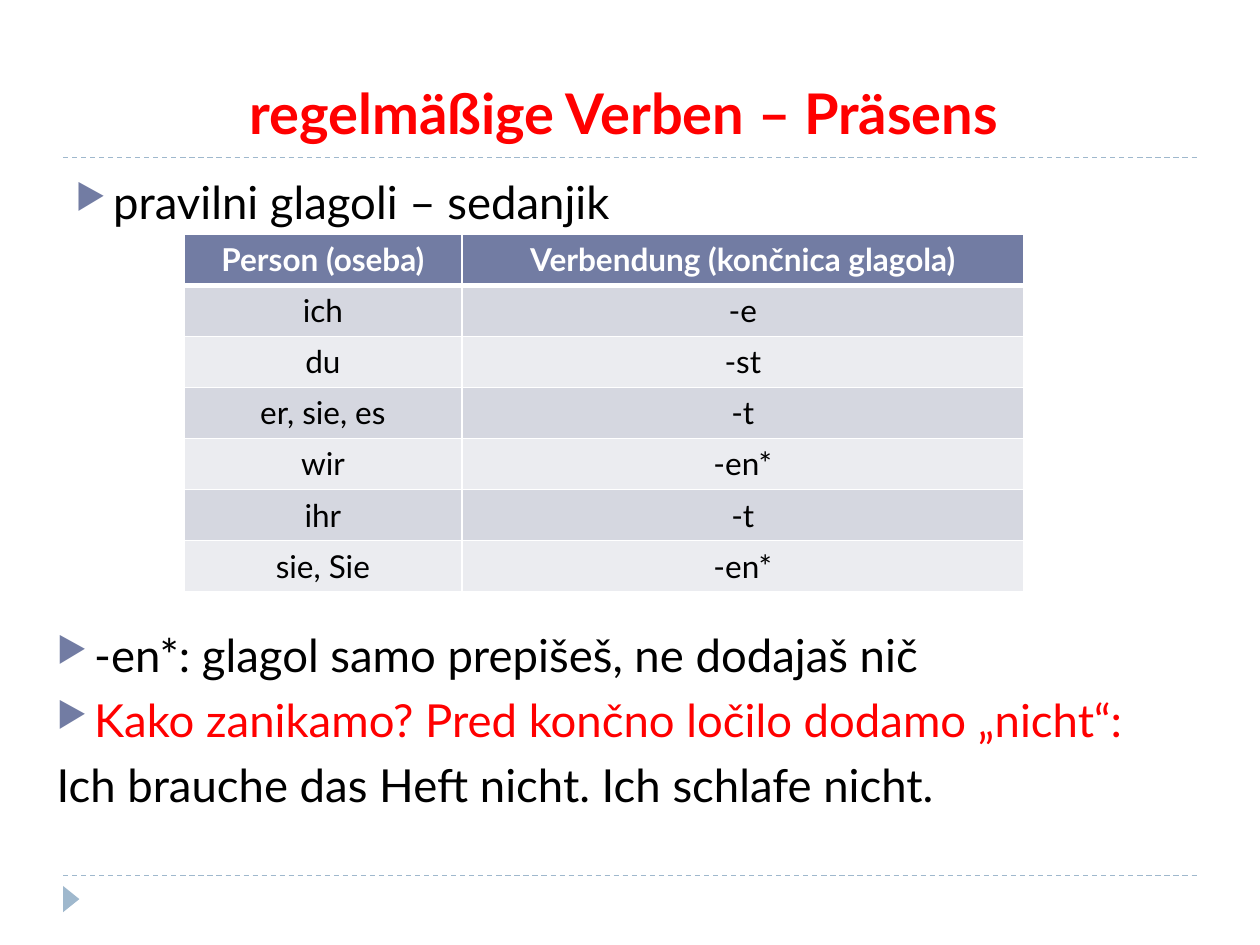
from lxml.etree import SubElement
from pptx import Presentation
from pptx.dml.color import RGBColor
from pptx.enum.dml import MSO_LINE
from pptx.enum.shapes import MSO_CONNECTOR, MSO_SHAPE
from pptx.enum.text import MSO_ANCHOR as Anchor, PP_ALIGN as Align
from pptx.oxml.ns import qn
from pptx.util import Cm, Pt

THEME = {
    "font": "Lato",
    "title_size": 32, "body_size": 26, "table_size": 18,
    "red": "FF0000", "black": "000000", "white": "FFFFFF",
    "accent": "727CA3", "rule": "9FB8CD", "bands": ("D5D7E0", "EBECF0"),
}

# Content
TITLE = "regelmäßige Verben – Präsens"
# (text, colour, bulleted)
SUBTITLE = [("pravilni glagoli – sedanjik", "black", True)]
REMARKS = [
    ("-en*: glagol samo prepišeš, ne dodajaš nič", "black", True),
    ("Kako zanikamo? Pred končno ločilo dodamo „nicht“:", "red", True),
    ("Ich brauche das Heft nicht. Ich schlafe nicht.", "black", False),
]
ENDINGS = [
    ("Person (oseba)", "Verbendung (končnica glagola)"),
    ("ich", "-e"),
    ("du", "-st"),
    ("er, sie, es", "-t"),
    ("wir", "-en*"),
    ("ihr", "-t"),
    ("sie, Sie", "-en*"),
]

# Layout in cm
TITLE_BOX = (1.3, 0.53, 22.86, 2.54)
SUBTITLE_BOX = (1.27, 3.38, 21.82, 13.72)
REMARKS_BOX = (0.89, 12.52, 23.19, 5.59)
TABLE_LEFT, TABLE_TOP, ROW_HEIGHT = 3.71, 4.72, 1.03
COLUMN_WIDTHS = (5.6, 11.33)
RULE_LEFT, RULE_RIGHT, RULE_TOPS = 1.27, 24.13, (3.18, 17.65)
MARKER_BOX = (1.17, 17.96, 0.53, 0.33)
BULLET_INDENT = 0.76


def rgb(name):
    return RGBColor.from_string(THEME.get(name, name))


def style(paragraph, size, colour, bold=False):
    for run in paragraph.runs:
        run.font.name = THEME["font"]
        run.font.size = Pt(size)
        run.font.bold = bold
        run.font.color.rgb = rgb(colour)


def add_bullet(paragraph):
    props = paragraph._p.get_or_add_pPr()
    props.set("marL", str(Cm(BULLET_INDENT)))
    props.set("indent", str(-Cm(BULLET_INDENT)))
    colour = SubElement(props, qn("a:buClr"))
    SubElement(colour, qn("a:srgbClr"), val=THEME["accent"])
    SubElement(props, qn("a:buSzPct"), val="76000")
    SubElement(props, qn("a:buChar"), char="▶")


def add_text_frame(slide, box):
    frame = slide.shapes.add_textbox(*map(Cm, box)).text_frame
    frame.word_wrap = True
    return frame


def add_body(slide, box, lines, align=Align.LEFT):
    body = add_text_frame(slide, box)
    body.text = "\n".join(text for text, _, _ in lines)
    for paragraph, (_, colour, bulleted) in zip(body.paragraphs, lines):
        paragraph.alignment = align
        paragraph.space_before = Pt(6)
        if bulleted:
            add_bullet(paragraph)
        style(paragraph, THEME["body_size"], colour)


def add_borders(cell, bottom=1, top=1):
    props = cell._tc.get_or_add_tcPr()
    widths = {"a:lnL": 1, "a:lnR": 1, "a:lnT": top, "a:lnB": bottom}
    for position, (side, width) in enumerate(widths.items()):
        border = SubElement(props, qn(side), w=str(Pt(width)))
        fill = SubElement(border, qn("a:solidFill"))
        SubElement(fill, qn("a:srgbClr"), val=THEME["white"])
        props.insert(position, border)  # borders come before the fill


def add_endings_table(slide):
    endings = slide.shapes.add_table(
        len(ENDINGS), len(COLUMN_WIDTHS), Cm(TABLE_LEFT), Cm(TABLE_TOP),
        Cm(sum(COLUMN_WIDTHS)), Cm(ROW_HEIGHT * len(ENDINGS))).table
    for column, width in zip(endings.columns, COLUMN_WIDTHS):
        column.width = Cm(width)
    for r, texts in enumerate(ENDINGS):
        endings.rows[r].height = Cm(ROW_HEIGHT)
        header = r == 0
        for c, text in enumerate(texts):
            cell = endings.cell(r, c)
            cell.text = text
            cell.fill.solid()
            cell.fill.fore_color.rgb = rgb(
                "accent" if header else THEME["bands"][(r - 1) % 2])
            add_borders(cell, bottom=3 if header else 1, top=3 if r == 1 else 1)
            paragraph = cell.text_frame.paragraphs[0]
            paragraph.alignment = Align.CENTER
            style(paragraph, THEME["table_size"],
                  "white" if header else "black", header)


def add_decoration(slide):
    for top in RULE_TOPS:
        rule = slide.shapes.add_connector(
            MSO_CONNECTOR.STRAIGHT, Cm(RULE_LEFT), Cm(top), Cm(RULE_RIGHT), Cm(top))
        rule.line.color.rgb = rgb("rule")
        rule.line.width = Pt(0.75)
        rule.line.dash_style = MSO_LINE.DASH
        SubElement(rule._element.spPr, qn("a:effectLst"))
    marker = slide.shapes.add_shape(MSO_SHAPE.ISOSCELES_TRIANGLE, *map(Cm, MARKER_BOX))
    marker.rotation = 90
    marker.shadow.inherit = False
    marker.fill.solid()
    marker.fill.fore_color.rgb = rgb("rule")
    marker.line.fill.background()


def main():
    deck = Presentation()
    deck.slide_width, deck.slide_height = Cm(25.4), Cm(19.05)
    slide = deck.slides.add_slide(deck.slide_layouts[6])

    # Rules and corner marker
    add_decoration(slide)

    # Title
    title = add_text_frame(slide, TITLE_BOX)
    title.vertical_anchor = Anchor.BOTTOM
    title.margin_right = Cm(0.55)
    title.text = TITLE
    title.paragraphs[0].alignment = Align.CENTER
    style(title.paragraphs[0], THEME["title_size"], "red", True)

    # Body and table
    add_body(slide, SUBTITLE_BOX, SUBTITLE, Align.JUSTIFY)
    add_body(slide, REMARKS_BOX, REMARKS)
    add_endings_table(slide)

    deck.save("out.pptx")


if __name__ == "__main__":
    main()
